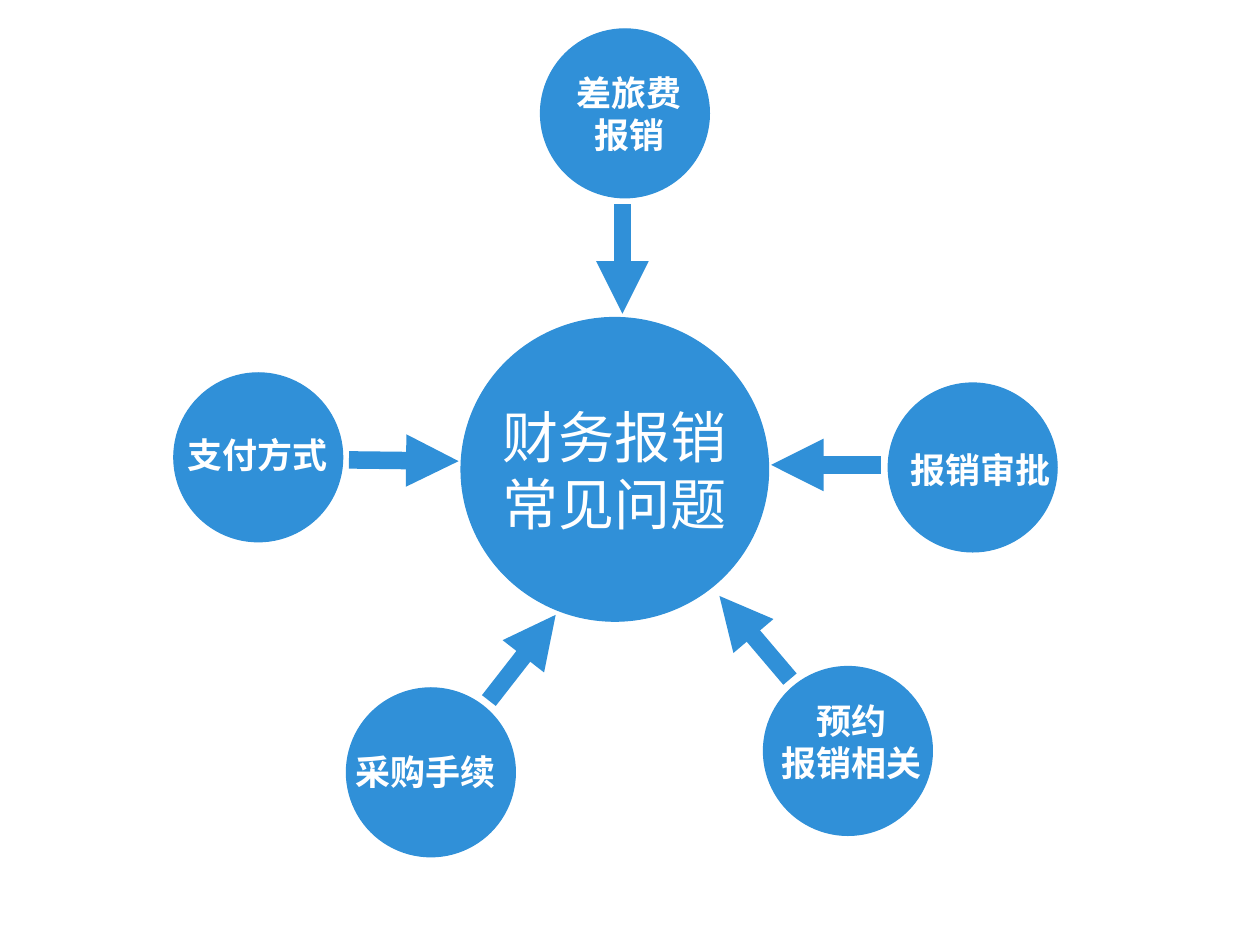
from dataclasses import dataclass

from lxml import etree
from pptx import Presentation
from pptx.dml.color import RGBColor
from pptx.enum import shapes, text
from pptx.oxml.ns import qn
from pptx.util import Inches, Pt


@dataclass(frozen=True)
class Theme:
    blue: RGBColor = RGBColor(0x30, 0x90, 0xD8)
    white: RGBColor = RGBColor(0xFF, 0xFF, 0xFF)
    font: str = "Noto Sans CJK SC"
    hub_size: Pt = Pt(32)
    label_size: Pt = Pt(20)
    outline: Pt = Pt(0.75)
    arrow: Pt = Pt(10)


theme = Theme()
CIRCLE = 1.34
CENTER, LEFT = text.PP_ALIGN.CENTER, text.PP_ALIGN.LEFT


def add_circle(parent, left, top, width, height):
    circle = parent.add_shape(shapes.MSO_SHAPE.OVAL, Inches(left), Inches(top),
                              Inches(width), Inches(height))
    circle.shadow.inherit = False
    circle.fill.solid()
    circle.fill.fore_color.rgb = theme.blue
    circle.line.color.rgb = theme.blue
    circle.line.width = theme.outline
    return circle


def write_lines(frame, lines, size, bold, align):
    """Fill a text frame with one white paragraph per line."""
    for index, line in enumerate(lines):
        paragraph = frame.add_paragraph() if index else frame.paragraphs[0]
        paragraph.alignment = align
        run = paragraph.add_run()
        run.text = line
        run.font.name = theme.font
        run.font.size = size
        run.font.bold = bold
        run.font.color.rgb = theme.white
        east_asian = etree.SubElement(run.font._element, qn("a:ea"))
        east_asian.set("typeface", theme.font)


presentation = Presentation()
presentation.slide_width = Inches(10)
presentation.slide_height = Inches(7.5)
slide = presentation.slides.add_slide(presentation.slide_layouts[6])

hub = add_circle(slide.shapes, 3.66, 2.52, 2.44, 2.41)
hub.text_frame.word_wrap = False
hub.text_frame.vertical_anchor = text.MSO_ANCHOR.MIDDLE
write_lines(hub.text_frame, ["财务报销", "常见问题"], theme.hub_size, False, CENTER)

# circle corner, arrow start, arrow end, label box, label lines
spokes = [
    ((4.29, 0.23), (4.94, 1.62), (4.94, 2.49), (4.21, 0.52, 1.57, 0.77), ["差旅费", "报销"]),
    ((1.38, 2.96), (2.77, 3.65), (3.64, 3.66), (1.39, 3.39, 1.32, 0.44), ["支付方式"]),
    ((7.05, 3.04), (6.99, 3.69), (6.12, 3.69), (7.13, 3.51, 1.32, 0.44), ["报销审批"]),
    ((6.06, 5.29), (6.27, 5.39), (5.71, 4.73), (6.10, 5.50, 1.32, 0.77), ["预约", "报销相关"]),
    ((2.75, 5.46), (3.88, 5.56), (4.41, 4.88), (2.72, 5.91, 1.32, 0.44), ["采购手续"]),
]

for corner, start, end, label_box, lines in spokes:
    group = slide.shapes.add_group_shape()
    add_circle(group.shapes, *corner, CIRCLE, CIRCLE)

    arrow = group.shapes.add_connector(shapes.MSO_CONNECTOR.STRAIGHT,
                                       *(Inches(value) for value in start + end))
    arrow.line.color.rgb = theme.blue
    arrow.line.width = theme.arrow
    properties = arrow.element.spPr
    etree.SubElement(properties.find(qn("a:ln")), qn("a:tailEnd")).set("type", "triangle")
    etree.SubElement(properties, qn("a:effectLst"))

    label = group.shapes.add_textbox(*(Inches(value) for value in label_box))
    label.text_frame.word_wrap = label_box[2] > CIRCLE
    label.text_frame.auto_size = text.MSO_AUTO_SIZE.SHAPE_TO_FIT_TEXT
    write_lines(label.text_frame, lines, theme.label_size, True,
                CENTER if len(lines) > 1 else LEFT)

presentation.save("out.pptx")
